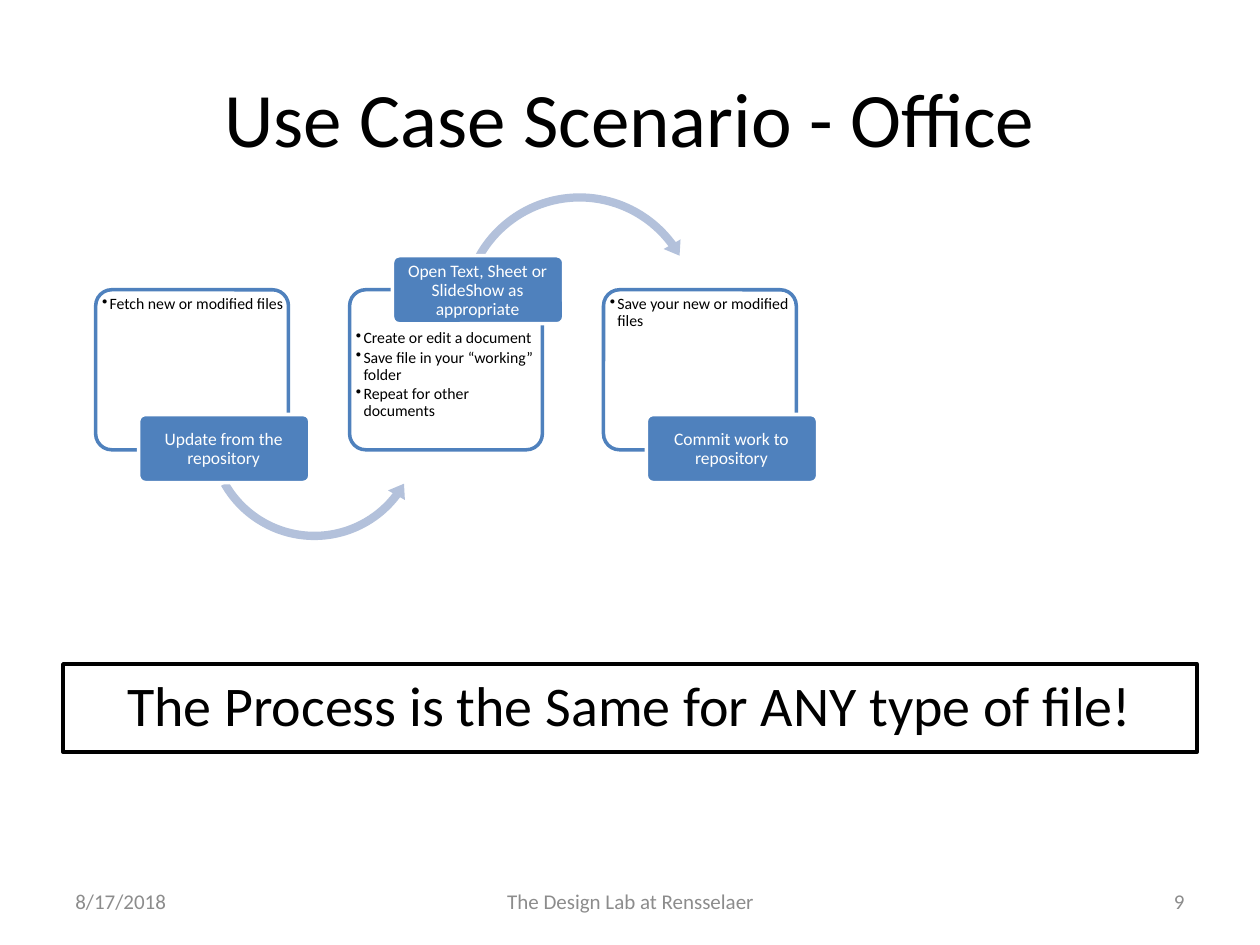
"""Build the office use case slide with its three-stage process."""
from lxml.etree import SubElement
from pptx import Presentation
from pptx.dml.color import RGBColor
from pptx.enum.shapes import MSO_SHAPE as Shape
from pptx.enum.text import MSO_ANCHOR as Anchor, PP_ALIGN as Align
from pptx.oxml.ns import qn
from pptx.util import Inches, Pt

BLACK = RGBColor(0x00, 0x00, 0x00)
WHITE = RGBColor(0xFF, 0xFF, 0xFF)
GRAY = RGBColor(0x8C, 0x8C, 0x8C)
BLUE = RGBColor(0x4F, 0x81, 0xBD)
PALE_BLUE = RGBColor(0xB3, 0xC1, 0xDB)


def add_shape(kind, place, fill, line=None):
    shape = page.shapes.add_shape(kind, *map(Inches, place))
    shape.shadow.inherit = False
    shape.fill.solid()
    shape.fill.fore_color.rgb = fill
    if line is None:
        shape.line.fill.background()
    else:
        shape.line.color.rgb = line
        shape.line.width = Pt(2)
    return shape


def write(place, lines, size, color, align=Align.CENTER, anchor=Anchor.MIDDLE,
          insets=(0.1, 0.05), spacing=None, after=0, bullet=False):
    box = page.shapes.add_textbox(*map(Inches, place))
    frame = box.text_frame
    frame.word_wrap = True
    frame.vertical_anchor = anchor
    frame.margin_left = frame.margin_right = Inches(insets[0])
    frame.margin_top = frame.margin_bottom = Inches(insets[1])
    frame.text = "\n".join(lines)
    for para in frame.paragraphs:
        para.alignment = align
        para.line_spacing = spacing
        para.space_after = Pt(after)
        if bullet:
            properties = para._p.get_or_add_pPr()
            properties.set("marL", str(Inches(0.06)))
            properties.set("indent", str(Inches(-0.06)))
            SubElement(properties, qn("a:buChar")).set("char", "•")
        para.font.name = "Calibri"
        para.font.size = Pt(size)
        para.font.color.rgb = color


deck = Presentation()
deck.slide_width, deck.slide_height = Inches(10), Inches(7.5)
page = deck.slides.add_slide(deck.slide_layouts[6])

write((0.5, 0.3, 9, 1.25), ["Use Case Scenario - Office"], 44, BLACK)

banner = (0.5, 5.27, 9, 0.7)
add_shape(Shape.RECTANGLE, banner, WHITE, BLACK)
write(banner, ["The Process is the Same for ANY type of file!"], 32, BLACK,
      anchor=Anchor.TOP)

footers = [
    (0.5, 2.33, "8/17/2018", Align.LEFT),
    (3.42, 3.17, "The Design Lab at Rensselaer", Align.CENTER),
    (7.17, 2.33, "9", Align.RIGHT),
]
for left, width, text, align in footers:
    write((left, 6.95, width, 0.4), [text], 12, GRAY, align)

lower_arrow = (Shape.LEFT_CIRCULAR_ARROW, (1.6, 2.54, 1.79, 1.79),
               (0.037, 4.581, 22.336, 90.245, 0.043))
upper_arrow = (Shape.CIRCULAR_ARROW, (3.61, 1.49, 1.98, 1.98),
               (0.033, 4.092, 194.153, 125.755, 0.039))
stages = [
    ("Update from the repository", 3.29, 2.33, lower_arrow,
     ["Fetch new or modified files"]),
    ("Open Text, Sheet or SlideShow as appropriate", 2.03, 2.6, upper_arrow,
     ["Create or edit a document", "Save file in your “working” folder",
      "Repeat for other documents"]),
    ("Commit work to repository", 3.29, 2.33, None,
     ["Save your new or modified files"]),
]
for index, (title, label_top, list_top, arrow, steps) in enumerate(stages):
    left = 0.76 + 2.015 * index
    card = add_shape(Shape.ROUNDED_RECTANGLE, (left, 2.3, 1.53, 1.27), WHITE, BLUE)
    card.adjustments[0] = 0.1
    card_color = card.fill._xPr.find(qn("a:solidFill"))[0]
    SubElement(card_color, qn("a:alpha")).set("val", "90000")
    write((left + 0.03, list_top, 1.48, 0.94), steps, 9, BLACK, Align.LEFT,
          Anchor.TOP, (0.02, 0.02), 0.9, 1.35, bullet=True)

    if arrow:
        kind, place, bends = arrow
        curve = add_shape(kind, place, PALE_BLUE)
        for position, bend in enumerate(bends):
            curve.adjustments[position] = bend

    label = add_shape(Shape.ROUNDED_RECTANGLE, (left + 0.34, label_top, 1.36, 0.54),
                      BLUE, WHITE)
    label.adjustments[0] = 0.1
    write((left + 0.35, label_top + 0.02, 1.33, 0.51), [title], 10, WHITE,
          insets=(0.02, 0.01), spacing=0.9)

deck.save("out.pptx")
